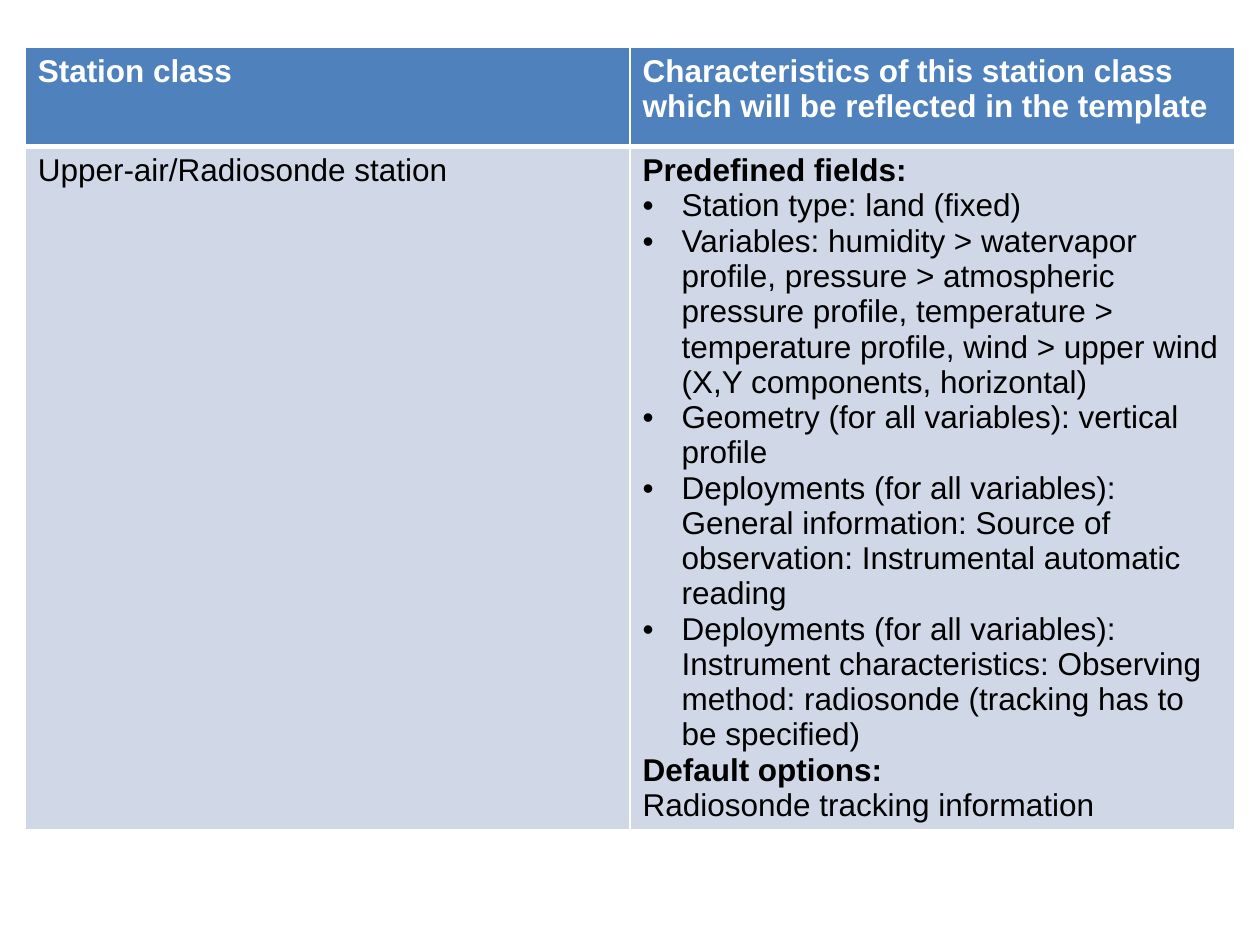
import pptx
import pptx.dml.color
import pptx.oxml
import pptx.oxml.ns
import pptx.util

WHITE = pptx.dml.color.RGBColor(0xFF, 0xFF, 0xFF)
BLACK = pptx.dml.color.RGBColor(0x00, 0x00, 0x00)
HEADER_BLUE = pptx.dml.color.RGBColor(0x4F, 0x81, 0xBD)
BODY_BLUE = pptx.dml.color.RGBColor(0xD0, 0xD8, 0xE8)

PLAIN, BOLD, BULLET = "plain", "bold", "bullet"
HEADER = [
    [("Station class", BOLD)],
    [("Characteristics of this station class which will be reflected in the template", BOLD)],
]
STATION = [
    [("Upper-air/Radiosonde station", PLAIN)],
    [
        ("Predefined fields:", BOLD),
        ("Station type: land (fixed)", BULLET),
        ("Variables: humidity > watervapor profile, pressure > atmospheric pressure profile, "
         "temperature > temperature profile, wind > upper wind (X,Y components, horizontal)", BULLET),
        ("Geometry (for all variables): vertical profile", BULLET),
        ("Deployments (for all variables): General information: Source of observation: "
         "Instrumental automatic reading", BULLET),
        ("Deployments (for all variables): Instrument characteristics: Observing method: "
         "radiosonde (tracking has to be specified)", BULLET),
        ("Default options:", BOLD),
        ("Radiosonde tracking information", PLAIN),
    ],
]


def add_bullet(paragraph):
    """Give the paragraph a hanging round bullet."""
    properties = paragraph._p.get_or_add_pPr()
    indent = pptx.util.Inches(0.31)
    properties.set("marL", str(indent))
    properties.set("indent", str(-indent))
    namespace = pptx.oxml.ns.nsdecls("a")
    properties.append(pptx.oxml.parse_xml(f'<a:buFont {namespace} typeface="Arial"/>'))
    properties.append(pptx.oxml.parse_xml(f'<a:buChar {namespace} char="•"/>'))


def set_borders(cell, top, bottom):
    """Draw white borders, one point wide at the sides."""
    properties = cell._tc.get_or_add_tcPr()
    widths = {"lnL": 1, "lnR": 1, "lnT": top, "lnB": bottom}
    for position, (side, width) in enumerate(widths.items()):
        border = pptx.oxml.parse_xml(
            f'<a:{side} {pptx.oxml.ns.nsdecls("a")} w="{pptx.util.Pt(width)}">'
            f'<a:solidFill><a:srgbClr val="{WHITE}"/></a:solidFill></a:{side}>')
        properties.insert(position, border)


def fill_cell(cell, entries, background, ink):
    """Write the entries into a cell and colour it."""
    cell.fill.solid()
    cell.fill.fore_color.rgb = background
    cell.text_frame.text = "\n".join(text for text, _ in entries)
    for paragraph, (_, style) in zip(cell.text_frame.paragraphs, entries):
        if style == BULLET:
            add_bullet(paragraph)
        for run in paragraph.runs:
            run.font.name = "Arial"
            run.font.size = pptx.util.Pt(18)
            run.font.bold = style == BOLD
            run.font.color.rgb = ink


def add_station_table(slide, left, top, width, row_heights):
    """Place the station class table with its header row."""
    station_table = slide.shapes.add_table(
        len(row_heights), len(HEADER), left, top, width, sum(row_heights)).table
    for row, height in zip(station_table.rows, row_heights):
        row.height = height
    for column, (heading, details) in enumerate(zip(HEADER, STATION)):
        heading_cell = station_table.cell(0, column)
        details_cell = station_table.cell(1, column)
        fill_cell(heading_cell, heading, HEADER_BLUE, WHITE)
        fill_cell(details_cell, details, BODY_BLUE, BLACK)
        set_borders(heading_cell, 1, 3)
        set_borders(details_cell, 3, 1)


def main():
    """Build and save the slide."""
    presentation = pptx.Presentation()
    presentation.slide_width = pptx.util.Inches(10)
    presentation.slide_height = pptx.util.Inches(7.5)
    slide = presentation.slides.add_slide(presentation.slide_layouts[6])
    margin = int(presentation.slide_width * 0.02)
    add_station_table(
        slide, margin, int(presentation.slide_height * 0.05),
        presentation.slide_width - 2 * margin,
        [pptx.util.Inches(0.79), pptx.util.Inches(5.4)])
    presentation.save("out.pptx")


if __name__ == "__main__":
    main()
